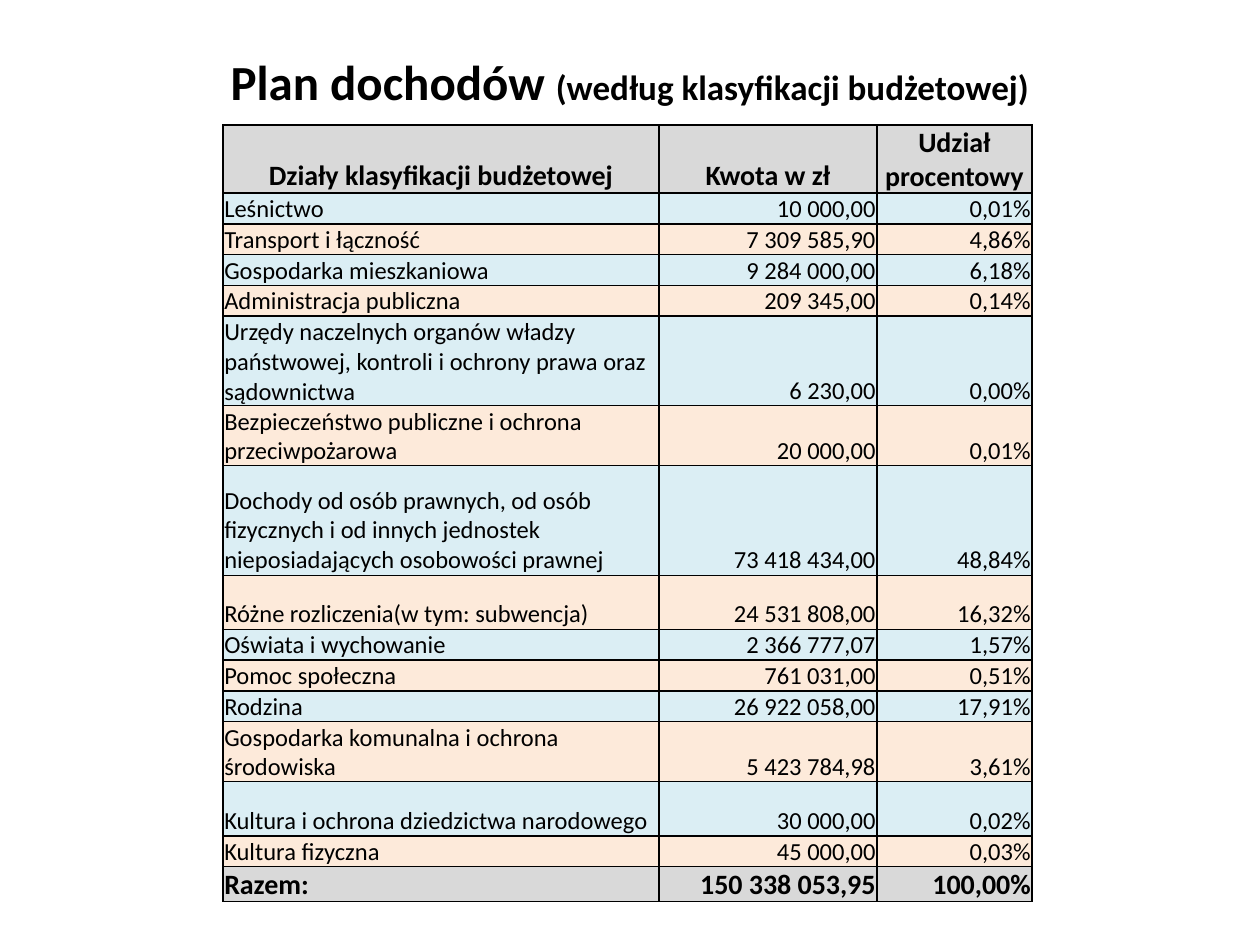
from lxml import etree
from pptx import Presentation
from pptx.dml.color import RGBColor
from pptx.enum import text
from pptx.oxml import ns
from pptx.util import Inches, Pt

BLACK = RGBColor(0x00, 0x00, 0x00)
GREY = RGBColor(0xD9, 0xD9, 0xD9)
BLUE = RGBColor(0xDB, 0xEE, 0xF4)
PEACH = RGBColor(0xFD, 0xEA, 0xDA)
FONT = "Calibri"

HEADER = ("Działy klasyfikacji budżetowej", "Kwota w zł", "Udział procentowy")
INCOME = [
    ("Leśnictwo", "10 000,00", "0,01%"),
    ("Transport i łączność", "7 309 585,90", "4,86%"),
    ("Gospodarka mieszkaniowa", "9 284 000,00", "6,18%"),
    ("Administracja publiczna", "209 345,00", "0,14%"),
    ("Urzędy naczelnych organów władzy państwowej, kontroli i ochrony prawa "
     "oraz sądownictwa", "6 230,00", "0,00%"),
    ("Bezpieczeństwo publiczne i ochrona przeciwpożarowa", "20 000,00", "0,01%"),
    ("Dochody od osób prawnych, od osób fizycznych i od innych jednostek "
     "nieposiadających osobowości prawnej", "73 418 434,00", "48,84%"),
    ("Różne rozliczenia(w tym: subwencja)", "24 531 808,00", "16,32%"),
    ("Oświata i wychowanie", "2 366 777,07", "1,57%"),
    ("Pomoc społeczna", "761 031,00", "0,51%"),
    ("Rodzina", "26 922 058,00", "17,91%"),
    ("Gospodarka komunalna i ochrona środowiska", "5 423 784,98", "3,61%"),
    ("Kultura i ochrona dziedzictwa narodowego", "30 000,00", "0,02%"),
    ("Kultura fizyczna", "45 000,00", "0,03%"),
]
TOTAL = ("Razem:", "150 338 053,95", "100,00%")
COLUMN_WIDTHS = (3.46, 1.73, 1.23)
ROW_HEIGHTS = (0.49, 0.22, 0.22, 0.22, 0.22, 0.67, 0.43, 0.87,
               0.43, 0.22, 0.22, 0.22, 0.43, 0.43, 0.22, 0.22)


def add_borders(cell):
    """Draw a 1 pt black line on all four sides; lines must precede the fill."""
    properties = cell._tc.get_or_add_tcPr()
    for position, side in enumerate(("lnL", "lnR", "lnT", "lnB")):
        line = etree.Element(ns.qn(f"a:{side}"), w=str(Pt(1)))
        fill = etree.SubElement(line, ns.qn("a:solidFill"))
        etree.SubElement(fill, ns.qn("a:srgbClr"), val=str(BLACK))
        properties.insert(position, line)


def style_font(font, size, bold):
    font.name = FONT
    font.size = Pt(size)
    font.bold = bold
    font.color.rgb = BLACK


prs = Presentation()
prs.slide_width, prs.slide_height = Inches(10), Inches(7.5)
slide = prs.slides.add_slide(prs.slide_layouts[6])

title = slide.shapes.add_textbox(Inches(0.5), Inches(0.3), Inches(9), Inches(0.69))
title.text_frame.word_wrap = True
title.text_frame.vertical_anchor = text.MSO_ANCHOR.MIDDLE
heading = title.text_frame.paragraphs[0]
heading.alignment = text.PP_ALIGN.CENTER
for words, size in (("Plan dochodów ", 28), ("(według klasyfikacji budżetowej)", 20)):
    run = heading.add_run()
    run.text = words
    style_font(run.font, size, True)

records = [HEADER, *INCOME, TOTAL]
budget = slide.shapes.add_table(len(records), len(HEADER), Inches(1.77), Inches(0.99),
                                Inches(6.43), Inches(6.15)).table
for column, width in zip(budget.columns, COLUMN_WIDTHS):
    column.width = Inches(width)
for row, height in zip(budget.rows, ROW_HEIGHTS):
    row.height = Inches(height)

for r, record in enumerate(records):
    is_header = r == 0
    is_emphasized = is_header or record is TOTAL
    row_fill = GREY if is_emphasized else (BLUE if r % 2 else PEACH)
    for c, value in enumerate(record):
        cell = budget.cell(r, c)
        cell.text = value
        cell.fill.solid()
        cell.fill.fore_color.rgb = row_fill
        cell.vertical_anchor = text.MSO_ANCHOR.BOTTOM
        cell.margin_left = cell.margin_right = cell.margin_top = Inches(0.01)
        cell.margin_bottom = 0
        add_borders(cell)
        paragraph = cell.text_frame.paragraphs[0]
        style_font(paragraph.font, 16 if is_emphasized else 14, is_emphasized)
        if is_header:
            paragraph.alignment = text.PP_ALIGN.CENTER
        else:
            paragraph.alignment = text.PP_ALIGN.RIGHT if c else text.PP_ALIGN.LEFT

prs.save("out.pptx")
